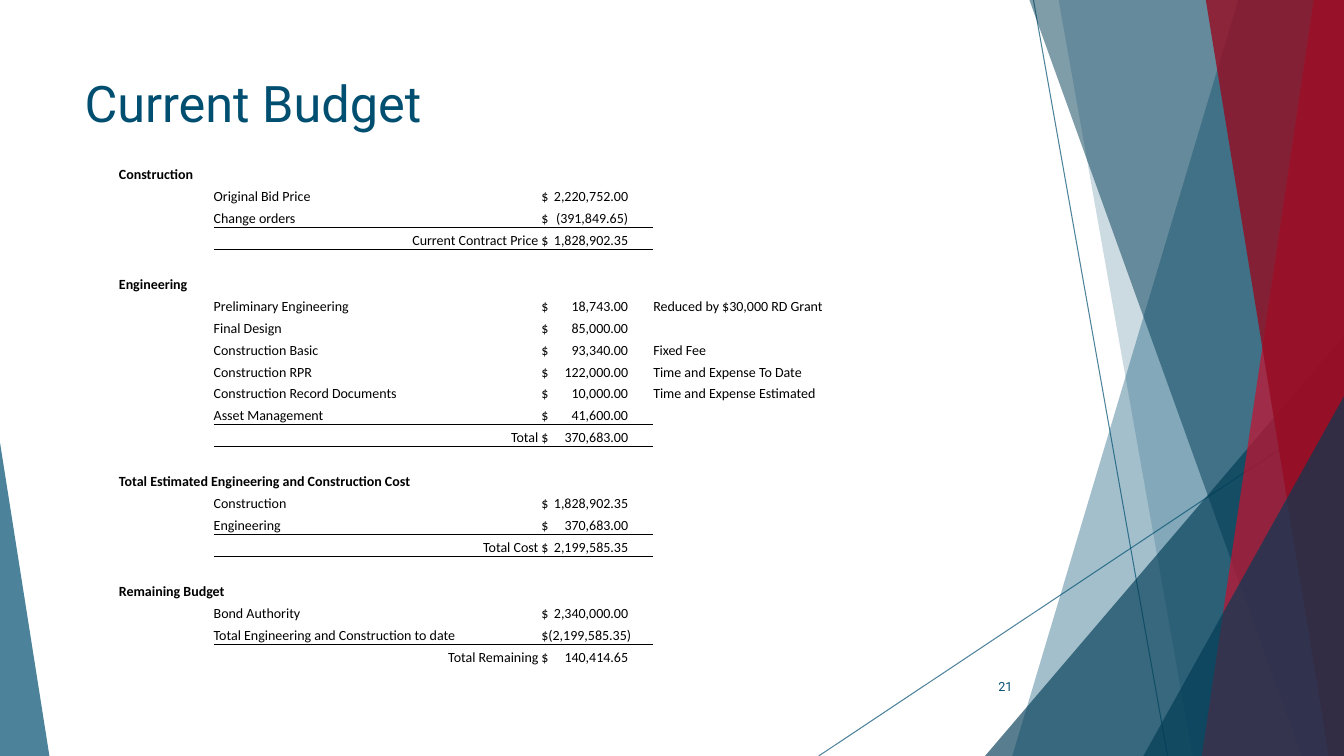
from lxml import etree
from pptx import Presentation
from pptx.dml.color import RGBColor
from pptx.enum.shapes import MSO_CONNECTOR, MSO_SHAPE
from pptx.enum.text import MSO_ANCHOR, PP_ALIGN
from pptx.oxml.ns import qn
from pptx.util import Inches, Pt

TRIANGLE = MSO_SHAPE.ISOSCELES_TRIANGLE
STRAIGHT = MSO_CONNECTOR.STRAIGHT
TOP, MIDDLE, BOTTOM = MSO_ANCHOR.TOP, MSO_ANCHOR.MIDDLE, MSO_ANCHOR.BOTTOM
LEFT, RIGHT = PP_ALIGN.LEFT, PP_ALIGN.RIGHT
PLAIN_TABLE_STYLE = "{2D5ABB26-0587-4C30-8999-92F81FD0307C}"

THEME = {
    "blue": "004F71", "navy": "003B55", "red": "C8102E", "crimson": "960C22", "ink": "000000",
    "display_font": "Roboto", "table_font": "Calibri",
    "title_size": 36, "table_size": 10, "number_size": 9,
}
WIDTH, HEIGHT = 13.33, 7.5

presentation = Presentation()
presentation.slide_width, presentation.slide_height = Inches(WIDTH), Inches(HEIGHT)
slide = presentation.slides.add_slide(presentation.slide_layouts[6])


def set_opacity(shape, percent):
    for color in shape._element.spPr.iter(qn("a:srgbClr")):
        etree.SubElement(color, qn("a:alpha"), val=str(percent * 1000))


def write(text_frame, text, font_name, size, color, align=LEFT, bold=False):
    text_frame.text = text
    paragraph = text_frame.paragraphs[0]
    paragraph.alignment = align
    for run in paragraph.runs:
        run.font.name, run.font.size, run.font.bold = font_name, Pt(size), bold
        run.font.color.rgb = RGBColor.from_string(THEME[color])
    if not text:
        etree.SubElement(paragraph._p, qn("a:endParaRPr"), sz=str(size * 100))


# Thin lines behind the facets: start x, start y, end x
for start_x, start_y, end_x in [(10.25, 0, 11.58), (WIDTH, 4.03, 8.12)]:
    line = slide.shapes.add_connector(
        STRAIGHT, Inches(start_x), Inches(start_y), Inches(end_x), Inches(HEIGHT))
    line.line.color.rgb = RGBColor.from_string(THEME["blue"])
    line.line.width = Pt(0.75)
    set_opacity(line, 70)
    etree.SubElement(line._element.spPr, qn("a:effectLst"))

# Panes reach the right edge: (top x, bottom x, bottom right x)
# Wedges stand on the bottom edge: (left, top, right, apex share)
facets = [
    ("pane", (12.28, 10.04, WIDTH), "blue", 36),
    ("pane", (10.5, 11.83, WIDTH), "blue", 20),
    ("wedge", (9.77, 3.33, WIDTH, 1), "navy", 66),
    ("pane", (10.21, 12.91, WIDTH), "navy", 50),
    ("pane", (13.03, 11.92, WIDTH), "red", 70),
    ("pane", (11.96, 13.18, WIDTH), "crimson", 80),
    ("wedge", (11.34, 3.93, WIDTH, 1), "navy", 66),
    ("wedge", (0, 4.39, 0.49, 0), "blue", 70),
]
for kind, geometry, color, opacity in facets:
    if kind == "pane":
        top_x, bottom_x, right = geometry
        builder = slide.shapes.build_freeform(Inches(top_x), 0)
        builder.add_line_segments([
            (Inches(right), 0), (Inches(right), Inches(HEIGHT)), (Inches(bottom_x), Inches(HEIGHT))])
        facet = builder.convert_to_shape()
    else:
        left, top, right, apex = geometry
        facet = slide.shapes.add_shape(
            TRIANGLE, Inches(left), Inches(top), Inches(right - left), Inches(HEIGHT - top))
        facet.adjustments[0] = apex
    facet.shadow.inherit = False
    facet.fill.solid()
    facet.fill.fore_color.rgb = RGBColor.from_string(THEME[color])
    facet.line.fill.background()
    set_opacity(facet, opacity)

# Title and slide number
for text, box, size, align, anchor in [
    ("Current Budget", (0.74, 0.67, 9.4, 1.44), THEME["title_size"], LEFT, TOP),
    ("21", (9.39, 6.61, 0.75, 0.4), THEME["number_size"], RIGHT, MIDDLE),
]:
    text_frame = slide.shapes.add_textbox(*map(Inches, box)).text_frame
    text_frame.word_wrap = True
    text_frame.vertical_anchor = anchor
    write(text_frame, text, THEME["display_font"], size, "blue", align)

# Each section: heading, columns it spans, items; the last item is the total
sections = [
    ("Construction", 1, [
        ("Original Bid Price", "$\t2,220,752.00", ""),
        ("Change orders", "$\t(391,849.65)", ""),
        ("Current Contract Price", "$\t1,828,902.35", "")]),
    ("Engineering", 1, [
        ("Preliminary Engineering", "$\t18,743.00", "Reduced by $30,000 RD Grant"),
        ("Final Design", "$\t85,000.00", ""),
        ("Construction Basic", "$\t93,340.00", "Fixed Fee"),
        ("Construction RPR", "$\t122,000.00", "Time and Expense To Date"),
        ("Construction Record Documents", "$\t10,000.00", "Time and Expense Estimated"),
        ("Asset Management", "$\t41,600.00", ""),
        ("Total", "$\t370,683.00", "")]),
    ("Total Estimated Engineering and Construction Cost", 2, [
        ("Construction", "$\t1,828,902.35", ""),
        ("Engineering", "$\t370,683.00", ""),
        ("Total Cost", "$\t2,199,585.35", "")]),
    ("Remaining Budget", 2, [
        ("Bond Authority", "$\t2,340,000.00", ""),
        ("Total Engineering and Construction to date", "$(2,199,585.35)", ""),
        ("Total Remaining", "$\t140,414.65", "")]),
]
rows, heading_spans, total_rows = [], {}, []
for heading, span, items in sections:
    if rows:
        rows.append(("", "", "", ""))
    heading_spans[len(rows)] = span
    rows.append((heading, "", "", ""))
    rows += [("", *item) for item in items]
    total_rows.append(len(rows) - 1)

column_widths = [0.94, 3.22, 1.14, 2.06]
table_height = 5.01
table = slide.shapes.add_table(
    len(rows), len(column_widths), Inches(1.18), Inches(1.6),
    Inches(sum(column_widths)), Inches(table_height)).table
table.first_row = table.horz_banding = False
table._tbl.tblPr.find(qn("a:tableStyleId")).text = PLAIN_TABLE_STYLE
for column, width in zip(table.columns, column_widths):
    column.width = Inches(width)

for row_index, row in enumerate(rows):
    table.rows[row_index].height = Inches(table_height / len(rows))
    for column_index, text in enumerate(row):
        cell = table.cell(row_index, column_index)
        is_label, is_amount = column_index == 1, column_index == 2
        cell.margin_left = Inches(0.03 if is_amount else 0)
        cell.margin_right = cell.margin_top = cell.margin_bottom = 0
        cell.vertical_anchor = BOTTOM
        cell.fill.background()
        align = RIGHT if is_label and row_index in total_rows else LEFT
        write(cell.text_frame, text, THEME["table_font"], THEME["table_size"], "ink",
              align, bold=row_index in heading_spans)
        if is_amount and text:
            properties = cell.text_frame.paragraphs[0]._p.get_or_add_pPr()
            tab_stops = etree.SubElement(properties, qn("a:tabLst"))
            etree.SubElement(tab_stops, qn("a:tab"), pos=str(Inches(0.86)), algn="r")
        for rule_row, side in [(row_index + 1, "a:lnB"), (row_index, "a:lnT")]:
            if rule_row in total_rows and (is_label or is_amount):
                border = etree.Element(qn(side), w=str(Pt(0.5)))
                border_fill = etree.SubElement(border, qn("a:solidFill"))
                etree.SubElement(border_fill, qn("a:srgbClr"), val=THEME["ink"])
                cell._tc.get_or_add_tcPr().insert(0, border)

for row_index, span in heading_spans.items():
    if span > 1:
        table.cell(row_index, 0).merge(table.cell(row_index, span - 1))

presentation.save("out.pptx")
